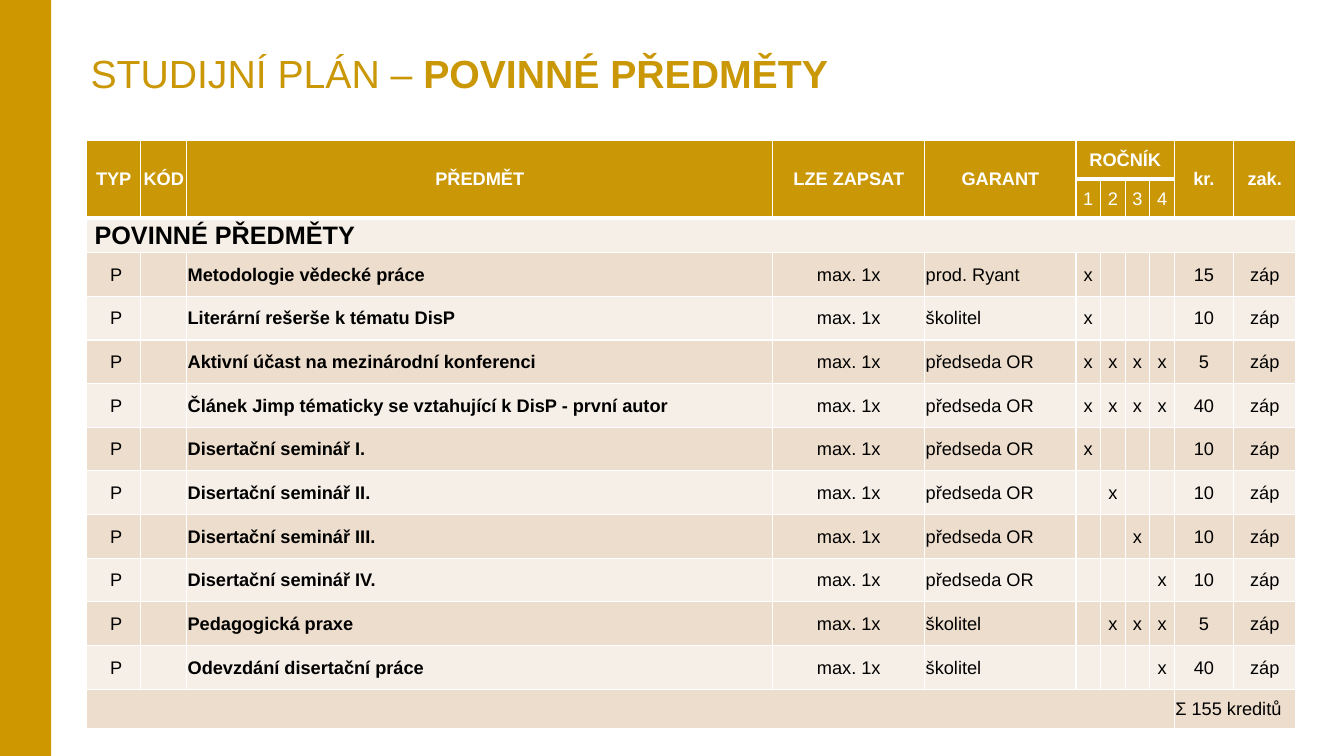
from pptx import Presentation
from pptx.dml.color import RGBColor
from pptx.enum.shapes import MSO_SHAPE as Shape
from pptx.enum.text import MSO_ANCHOR as Anchor, MSO_AUTO_SIZE as AutoSize, PP_ALIGN as Align
from pptx.oxml import parse_xml
from pptx.oxml.ns import nsdecls
from pptx.util import Pt

FONT = "Arial"
GOLD, BAND, WHITE, BLACK = "CA9706", "CE9700", "FFFFFF", "000000"
DARK_ROW, LIGHT_ROW = "EDDDCC", "F6EFE7"

HEADINGS = ["TYP", "KÓD", "PŘEDMĚT", "LZE ZAPSAT", "GARANT", "ROČNÍK", "", "", "", "kr.", "zak."]
YEARS = "1234"
YEAR_COL, CREDIT_COL = 5, 9
SUBJECT_COL, GUARANTOR_COL = 2, 4
COLUMN_WIDTHS = [38.6, 32.9, 418.6, 108.6, 108] + [17.6] * 4 + [42.2, 44.7]

# Subject, guarantor, years, credits
SUBJECTS = [
    ("Metodologie vědecké práce", "prod. Ryant", "1", 15),
    ("Literární rešerše k tématu DisP", "školitel", "1", 10),
    ("Aktivní účast na mezinárodní konferenci", "předseda OR", "1234", 5),
    ("Článek Jimp tématicky se vztahující k DisP - první autor", "předseda OR", "1234", 40),
    ("Disertační seminář I.", "předseda OR", "1", 10),
    ("Disertační seminář II.", "předseda OR", "2", 10),
    ("Disertační seminář III.", "předseda OR", "3", 10),
    ("Disertační seminář IV.", "předseda OR", "4", 10),
    ("Pedagogická praxe", "školitel", "234", 5),
    ("Odevzdání disertační práce", "školitel", "4", 40),
]
ROW_HEIGHTS = [28, 28, 24.5] + [31.2] * len(SUBJECTS) + [28]


def color(value):
    return RGBColor.from_string(value)


def style_span(span, size, tint, bold=False):
    font = span.font
    font.name, font.size, font.bold = FONT, Pt(size), bold
    font.color.rgb = color(tint)


def add_side_band(page, left, top, width, height):
    band = page.shapes.add_shape(Shape.RECTANGLE, Pt(left), Pt(top), Pt(width), Pt(height))
    band.shadow.inherit = False
    band.fill.solid()
    band.fill.fore_color.rgb = color(BAND)
    band.line.fill.background()


def add_title(page, left, top, width, height):
    box = page.shapes.add_textbox(Pt(left), Pt(top), Pt(width), Pt(height))
    frame = box.text_frame
    frame.word_wrap = True
    frame.auto_size = AutoSize.SHAPE_TO_FIT_TEXT
    para = frame.paragraphs[0]
    for text, bold in [("STUDIJNÍ PLÁN – ", False), ("POVINNÉ PŘEDMĚTY", True)]:
        span = para.add_run()
        span.text = text
        style_span(span, 28, GOLD, bold)


def add_borders(cell, top, bottom):
    properties = cell._tc.get_or_add_tcPr()
    for side, weight in [("L", 1), ("R", 1), ("T", top), ("B", bottom)]:
        properties.append(parse_xml(
            f'<a:ln{side} {nsdecls("a")} w="{Pt(weight)}"><a:solidFill>'
            f'<a:srgbClr val="{WHITE}"/></a:solidFill></a:ln{side}>'))


def fill_cell(cell, text, row, column):
    header, section = row < 2, row == 2
    total = row == len(ROW_HEIGHTS) - 1
    cell.margin_left = cell.margin_right = cell.margin_top = Pt(0.7)
    cell.margin_bottom = 0
    cell.vertical_anchor = Anchor.MIDDLE

    # Heavy rules lie under both header rows; borders come before the fill
    add_borders(cell, 3 if row in (1, 2) else 1, 3 if header else 1)
    cell.fill.solid()
    cell.fill.fore_color.rgb = color(GOLD if header else DARK_ROW if row % 2 else LIGHT_ROW)
    if not text:
        return

    cell.text_frame.text = text
    para = cell.text_frame.paragraphs[0]
    left_aligned = not header and column in (SUBJECT_COL, GUARANTOR_COL)
    para.alignment = Align.LEFT if left_aligned or section or total else Align.CENTER
    bold = row == 0 or section or (column == SUBJECT_COL and not header)
    style_span(para.runs[0], 18 if section else 13, WHITE if header else BLACK, bold)


def plan_rows():
    blank = [""] * len(HEADINGS)
    yield HEADINGS
    yield blank[:YEAR_COL] + list(YEARS) + blank[CREDIT_COL:]
    yield [" POVINNÉ PŘEDMĚTY"] + blank[1:]
    for subject, guarantor, years, credits in SUBJECTS:
        marks = ["x" if year in years else "" for year in YEARS]
        yield [" P", "", subject, "max. 1x", guarantor, *marks, str(credits), "záp"]
    yield blank[:CREDIT_COL] + ["Σ 155 kreditů", ""]


def add_plan_table(page, left, top):
    table = page.shapes.add_table(
        len(ROW_HEIGHTS), len(COLUMN_WIDTHS), Pt(left), Pt(top),
        Pt(sum(COLUMN_WIDTHS)), Pt(sum(ROW_HEIGHTS))).table
    for column, width in zip(table.columns, COLUMN_WIDTHS):
        column.width = Pt(width)
    for row, height in zip(table.rows, ROW_HEIGHTS):
        row.height = Pt(height)

    for r, texts in enumerate(plan_rows()):
        for c, text in enumerate(texts):
            fill_cell(table.cell(r, c), text, r, c)

    # Merged header, section and total cells
    last_row, last_col = len(ROW_HEIGHTS) - 1, len(COLUMN_WIDTHS) - 1
    for c, heading in enumerate(HEADINGS):
        if heading and c != YEAR_COL:
            table.cell(0, c).merge(table.cell(1, c))
    for r, first, last in [(0, YEAR_COL, CREDIT_COL - 1), (2, 0, last_col),
                           (last_row, 0, CREDIT_COL - 1), (last_row, CREDIT_COL, last_col)]:
        table.cell(r, first).merge(table.cell(r, last))


def main():
    deck = Presentation()
    deck.slide_width, deck.slide_height = Pt(960), Pt(540)
    page = deck.slides.add_slide(deck.slide_layouts[6])
    add_side_band(page, 0, 0, 36.5, 540)
    add_title(page, 57.6, 31.7, 638.6, 41)
    add_plan_table(page, 61.9, 100)
    deck.save("out.pptx")


if __name__ == "__main__":
    main()
